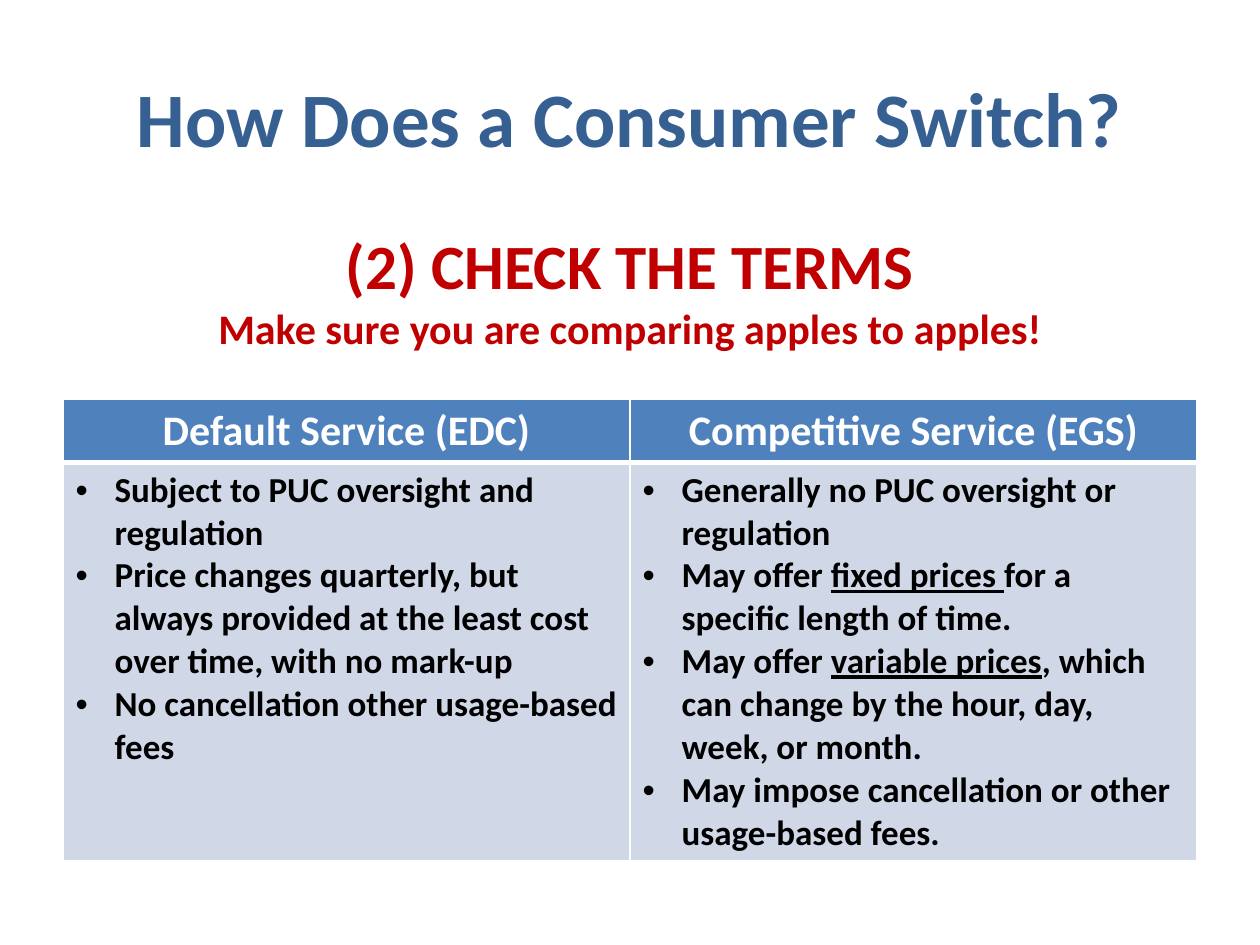
import pptx
import pptx.util
import pptx.dml.color
import pptx.enum.text
import pptx.oxml.ns
import lxml.etree

Inches, Pt = pptx.util.Inches, pptx.util.Pt
RGBColor = pptx.dml.color.RGBColor
PP_ALIGN, MSO_ANCHOR = pptx.enum.text.PP_ALIGN, pptx.enum.text.MSO_ANCHOR

NAVY = RGBColor(0x37, 0x60, 0x92)
RED = RGBColor(0xC0, 0x00, 0x00)
BLUE = RGBColor(0x4F, 0x81, 0xBD)
PALE = RGBColor(0xD0, 0xD8, 0xE8)
WHITE = RGBColor(0xFF, 0xFF, 0xFF)
BLACK = RGBColor(0x00, 0x00, 0x00)

W, H = Inches(10), Inches(7.5)
MARGIN = W // 20
SERVICES = {
    "Default Service (EDC)": [
        ["Subject to PUC oversight and regulation"],
        ["Price changes quarterly, but always provided at the least cost over time, with no mark-up"],
        ["No cancellation other usage-based fees"],
    ],
    "Competitive Service (EGS)": [
        ["Generally no PUC oversight or regulation"],
        ["May offer ", "fixed prices ", "for a specific length of time."],
        ["May offer ", "variable prices", ", which can change by the hour, day, week, or month."],
        ["May impose cancellation or other usage-based fees."],
    ],
}


def set_font(font, size, color):
    """Apply the slide's bold Calibri."""
    font.name, font.size, font.bold = "Calibri", Pt(size), True
    font.color.rgb = color


def add_child(parent, tag, **attrs):
    """Append a DrawingML element with the given attributes."""
    return lxml.etree.SubElement(parent, pptx.oxml.ns.qn(tag), attrs)


def add_heading(s, box, lines, color, anchor):
    """Place one centred paragraph of (text, size) lines in the box."""
    tf = s.shapes.add_textbox(*box).text_frame
    tf.word_wrap, tf.vertical_anchor = True, anchor
    p = tf.paragraphs[0]
    p.alignment = PP_ALIGN.CENTER
    for i, (text, size) in enumerate(lines):
        if i:
            p.add_line_break()
        r = p.add_run()
        r.text = text
        set_font(r.font, size, color)


def style_cell(cell, fill, top, bottom):
    """Give a cell white borders and a solid fill."""
    tcPr = cell._tc.get_or_add_tcPr()
    for side, width in (("L", 1), ("R", 1), ("T", top), ("B", bottom)):
        ln = add_child(tcPr, f"a:ln{side}", w=str(Pt(width)))
        add_child(add_child(ln, "a:solidFill"), "a:srgbClr", val=str(WHITE))
    cell.fill.solid()
    cell.fill.fore_color.rgb = fill


def add_bullets(tf, items):
    """Fill a frame with bullets whose every second run is underlined."""
    for i, item in enumerate(items):
        p = tf.add_paragraph() if i else tf.paragraphs[0]
        indent = Inches(0.31)
        pPr = p._p.get_or_add_pPr()
        pPr.set("marL", str(indent))
        pPr.set("indent", str(-indent))
        add_child(pPr, "a:buFont", typeface="Arial")
        add_child(pPr, "a:buChar", char="•")
        set_font(p.font, 20, BLACK)
        for j, text in enumerate(item):
            r = p.add_run()
            r.text = text
            if j % 2:
                r.font.underline = True


def add_comparison(s, box, services):
    """Place the table with one column for each service."""
    table = s.shapes.add_table(2, len(services), *box).table
    table.rows[0].height = Inches(0.5)
    table.rows[1].height = box[3] - table.rows[0].height
    for col, (name, items) in enumerate(services.items()):
        head, body = table.cell(0, col), table.cell(1, col)
        style_cell(head, BLUE, 1, 3)
        style_cell(body, PALE, 3, 1)
        p = head.text_frame.paragraphs[0]
        p.text, p.alignment = name, PP_ALIGN.CENTER
        set_font(p.font, 24, WHITE)
        add_bullets(body.text_frame, items)


def main():
    """Build and save the slide."""
    prs = pptx.Presentation()
    prs.slide_width, prs.slide_height = W, H
    s = prs.slides.add_slide(prs.slide_layouts[6])
    width = W - 2 * MARGIN
    add_heading(s, (MARGIN, int(H * 0.04), width, H // 6),
                [("How Does a Consumer Switch?", 44)], NAVY, MSO_ANCHOR.MIDDLE)
    add_heading(s, (MARGIN, Inches(1.75), width, int(H * 0.66)),
                [("(2) CHECK THE TERMS", 36),
                 ("Make sure you are comparing apples to apples!", 24)], RED, MSO_ANCHOR.TOP)
    add_comparison(s, (MARGIN, Inches(3.17), width, Inches(3.66)), SERVICES)
    prs.save("out.pptx")


if __name__ == "__main__":
    main()
